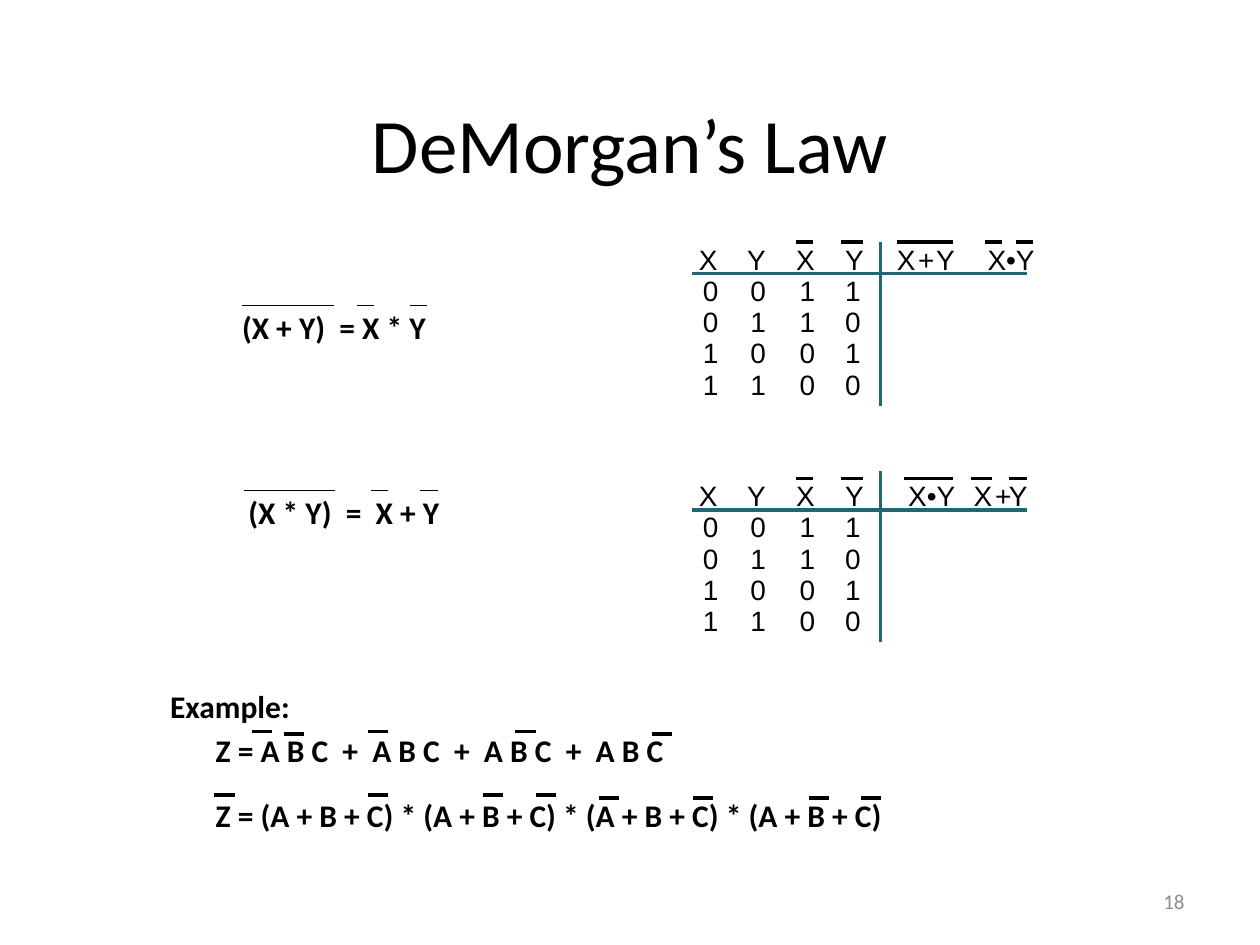
from lxml import etree
from pptx import Presentation, util as u
from pptx.dml.color import RGBColor
from pptx.enum import shapes, text
from pptx.oxml.ns import qn

BLACK, TEAL, GREY = "000000", "226577", "8C8C8C"
ROW = 0.63
DIGITS = ["0011", "0101", "1100", "1010"]
VARIABLES = [("X", 0.15, 0.23), ("Y", 1.12, 1.19), ("X", 2.11, 2.18), ("Y", 3.1, 3.1)]
VARIABLE_BARS = [(2.11, 2.46), (3.02, 3.45)]


def colour(value):
    return RGBColor.from_string(value)


def add_text(s, box, lines, size, font="Calibri", bold=False, color=BLACK,
             inset=(0.18, 0.08), align=text.PP_ALIGN.LEFT, anchor=text.MSO_ANCHOR.TOP,
             wrap=False, spacing=None, gap=0):
    """Add one paragraph per line; gap is the space in points between them."""
    tf = s.shapes.add_textbox(*map(u.Cm, box)).text_frame
    tf.word_wrap = wrap
    tf.auto_size = text.MSO_AUTO_SIZE.NONE if wrap else text.MSO_AUTO_SIZE.SHAPE_TO_FIT_TEXT
    tf.vertical_anchor = anchor
    tf.margin_left = tf.margin_right = u.Cm(inset[0])
    tf.margin_top = tf.margin_bottom = u.Cm(inset[1])
    for i, line in enumerate(lines):
        p = tf.add_paragraph() if i else tf.paragraphs[0]
        p.text = line
        p.alignment = align
        p.font.size, p.font.name, p.font.bold = u.Pt(size), font, bold
        p.font.color.rgb = colour(color)
        if spacing:
            p.line_spacing = spacing
        if i:
            p.space_before = u.Pt(gap)


def add_line(s, x1, y1, x2, y2, color=BLACK, width=2):
    line = s.shapes.add_connector(shapes.MSO_CONNECTOR.STRAIGHT, *map(u.Cm, (x1, y1, x2, y2)))
    line.line.color.rgb = colour(color)
    line.line.width = u.Pt(width)
    etree.SubElement(line._element.spPr, qn("a:effectLst"))


def add_overbars(s, left, y, spans, width=2):
    for start, end in spans:
        add_line(s, left + start, y, left + end, y, width=width)


def truth_table(s, left, top, results, result_bars, rise=0):
    """Draw a truth table; rise is how far its divider stands above the top."""
    def cell(x, row, value, width=0.5):
        add_text(s, (left + x, top + row * ROW, width, 0.69), [value], 16,
                 font="Arial", inset=(0, 0))

    for (name, name_x, digit_x), digits in zip(VARIABLES, DIGITS):
        cell(name_x, 0, name)
        for row, digit in enumerate(digits, 1):
            cell(digit_x, row, digit)
    for x, name in results:
        cell(x, 0, name, 1.12 if len(name) > 1 else 0.5)
    add_line(s, left, top + ROW, left + 6.76, top + ROW, TEAL)
    add_line(s, left + 3.81, top - rise, left + 3.81, top + 3.3, TEAL)
    add_overbars(s, left, top, VARIABLE_BARS + result_bars)


def law(s, left, top, width, equation, bars):
    add_text(s, (left, top, width, 0.81), [equation], 18, bold=True, spacing=0.85)
    add_overbars(s, left, top - 0.09, bars, width=1)


def example(s, left, top):
    add_text(s, (left, top, 2.79, 0.81), ["Example:"], 18, bold=True, spacing=0.85)
    x, y = left + 0.92, top + 0.89
    add_text(s, (x, y, 14, 2.11), [
        "Z = A B C  +  A B C  +  A B C  +  A B C",
        "Z = (A + B + C) * (A + B + C) * (A + B + C) * (A + B + C)",
    ], 18, bold=True, spacing=0.85, gap=18.7)
    bar_rows = [
        (-0.03, [0.91, 3.25, 6.22]),
        (0.02, [1.55, 8.97]),
        (1.25, [0.15, 3.25, 5.56, 6.63]),
        (1.31, [7.9, 9.8, 12.14, 13.18]),
    ]
    for offset, starts in bar_rows:
        add_overbars(s, x, y + offset, [(start, start + 0.41) for start in starts])


def main():
    prs = Presentation()
    prs.slide_width, prs.slide_height = u.Cm(25.4), u.Cm(19.05)
    s = prs.slides.add_slide(prs.slide_layouts[6])

    add_text(s, (1.27, 0.76, 22.86, 3.18), ["DeMorgan’s Law"], 44, inset=(0.25, 0.13),
             align=text.PP_ALIGN.CENTER, anchor=text.MSO_ANCHOR.BOTTOM, wrap=True)
    law(s, 4.7, 6.25, 4.11, "(X + Y)  = X * Y", [(0.18, 2.03), (2.49, 2.84), (3.56, 3.91)])
    law(s, 4.83, 9.98, 4.27, "(X * Y)  =  X + Y", [(0.08, 1.93), (2.64, 3), (3.63, 3.99)])
    truth_table(s, 13.94, 4.88, [(4.14, "X"), (4.57, "+"), (4.93, "Y"), (5.97, "X•Y")],
                [(4.14, 5.28), (5.92, 6.25), (6.55, 6.88)])
    truth_table(s, 13.94, 9.65, [(4.37, "X•Y"), (5.69, "X"), (6.12, "+"), (6.4, "Y")],
                [(4.29, 5.28), (5.64, 6.05), (6.4, 6.76)], rise=0.15)
    example(s, 3.25, 13.89)
    add_text(s, (18.21, 17.65, 5.92, 1.02), ["18"], 12, color=GREY, inset=(0.25, 0.13),
             align=text.PP_ALIGN.RIGHT, anchor=text.MSO_ANCHOR.MIDDLE, wrap=True)
    prs.save("out.pptx")


if __name__ == "__main__":
    main()
